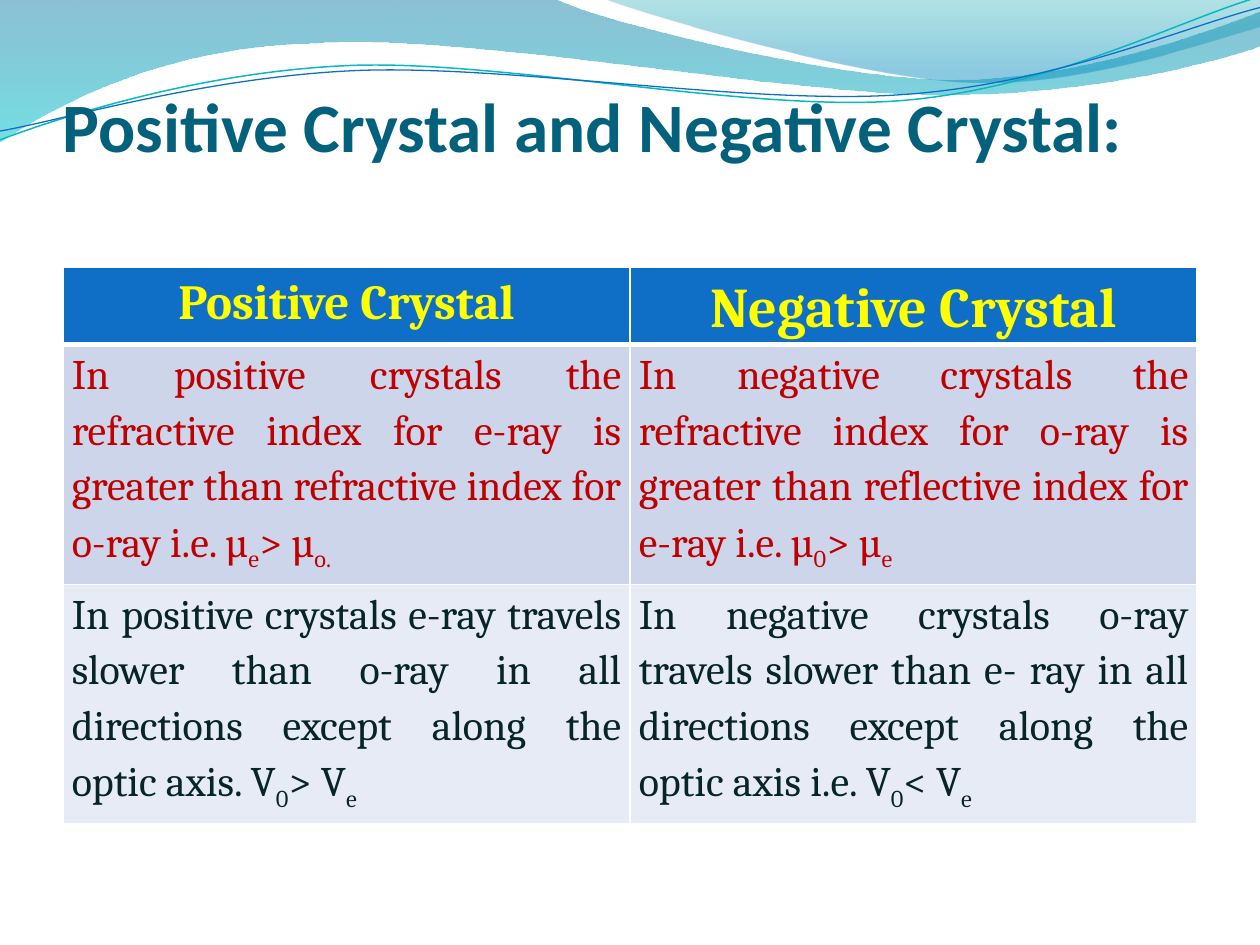
import math

from lxml import etree
from pptx import Presentation
from pptx.dml.color import RGBColor
from pptx.enum.text import MSO_ANCHOR, PP_ALIGN
from pptx.oxml.ns import qn
from pptx.util import Inches, Pt

CENTER, JUSTIFY, BOTTOM = PP_ALIGN.CENTER, PP_ALIGN.JUSTIFY, MSO_ANCHOR.BOTTOM
BLUE = RGBColor(0x0F, 0x6F, 0xC6)
TEAL = RGBColor(0x0A, 0xB8, 0xBF)
TITLE_COLOR = RGBColor(0x04, 0x61, 0x7B)
YELLOW = RGBColor(0xFF, 0xFF, 0x00)
RED = RGBColor(0xC0, 0x00, 0x00)
DARK = RGBColor(0x07, 0x24, 0x28)
BAND_1 = RGBColor(0xCC, 0xD5, 0xEA)
BAND_2 = RGBColor(0xE7, 0xEB, 0xF5)

# Content: body cells alternate normal and subscript runs
TITLE = "Positive Crystal and Negative Crystal:"
HEADERS = [("Positive Crystal", 28), ("Negative Crystal", 32)]
BODY = [
    (RED, BAND_1, [
        ["In positive crystals the refractive index for e-ray is greater than "
         "refractive index for o-ray i.e. µ", "e", "> µ", "o."],
        ["In negative crystals the refractive index for o-ray is greater than "
         "reflective index for e-ray i.e. µ", "0", "> µ", "e"],
    ]),
    (DARK, BAND_2, [
        ["In positive crystals e-ray travels slower than o-ray in all "
         "directions except along the optic axis. V", "0", "> V", "e"],
        ["In negative crystals o-ray travels slower than e- ray in all "
         "directions except along the optic axis i.e. V", "0", "< V", "e"],
    ]),
]
MIN_ROW_HEIGHT = 0.41

# Waves: one point is a straight step, three points are a Bezier step
FILLED_WAVES = [
    ([[(0, 0)], [(4.4, -0.01)], [(4.76, 0.17), (6.64, 0.63), (7.58, 0.63)],
      [(8.53, 0.63), (9.58, 0.26), (10, 0.09)], [(10.01, 0.36)],
      [(9.83, 0.44), (8.7, 0.76), (7.46, 0.75)],
      [(6.22, 0.75), (3.82, 0.28), (2.57, 0.34)],
      [(1.29, 0.36), (0.46, 0.83), (-0.01, 1.13)]],
     [(0, RGBColor(0x00, 0x74, 0xA1), 45), (1, RGBColor(0x00, 0xC6, 0xCF), 55)]),
    ([[(4.79, -0.01)], [(5.09, 0.11), (6.82, 0.62), (7.69, 0.65)],
      [(8.56, 0.69), (9.61, 0.32), (10, 0.21)], [(10, 0)]],
     [(0, RGBColor(0x00, 0xA1, 0xA9), 30), (0.8, RGBColor(0x00, 0x8B, 0xBF), 45)]),
]
LINE_WAVES = [
    ([[(0, 1.11)], [(0.48, 0.93), (1.58, 0.57), (2.77, 0.52)],
      [(3.95, 0.47), (5.93, 0.89), (7.13, 0.8)],
      [(8.33, 0.71), (9.38, 0.15), (9.98, -0.02)]], TEAL, 0.85),
    ([[(0, 1.04)], [(0.47, 0.96), (1.64, 0.61), (2.83, 0.56)],
      [(4.03, 0.51), (5.97, 0.84), (7.17, 0.75)],
      [(8.36, 0.67), (9.41, 0.21), (10, 0.06)]], BLUE, 0.75),
]
LINE_TILT = -2.7
LINE_CENTER = (4.99, 0.57)


def level(point):
    """Turn a point of a tilted line back to its level position."""
    angle = math.radians(-LINE_TILT)
    x, y = point[0] - LINE_CENTER[0], point[1] - LINE_CENTER[1]
    return (LINE_CENTER[0] + x * math.cos(angle) - y * math.sin(angle),
            LINE_CENTER[1] + x * math.sin(angle) + y * math.cos(angle))


def add_wave(slide, steps, close):
    points = [(Inches(x), Inches(y)) for step in steps for x, y in step]
    builder = slide.shapes.build_freeform(*points[0])
    builder.add_line_segments(points[1:], close=close)
    wave = builder.convert_to_shape()
    wave.shadow.inherit = False
    # Join each three points of a Bezier step into one curve
    segments = iter(list(wave._element.iter(qn("a:lnTo"))))
    for step in steps[1:]:
        curve, *others = [next(segments) for _ in step]
        if others:
            bezier = etree.Element(qn("a:cubicBezTo"))
            curve.addprevious(bezier)
            for segment in (curve, *others):
                bezier.append(segment[0])
                segment.getparent().remove(segment)
    return wave


def add_run(paragraph, text, font_name, size, color, bold=False, subscript=False):
    run = paragraph.add_run()
    run.text = text
    run.font.name, run.font.size, run.font.bold = font_name, Pt(size), bold
    run.font.color.rgb = color
    if subscript:
        run.font._element.set("baseline", "-25000")


def set_borders(cell, bottom):
    properties = cell._tc.get_or_add_tcPr()
    for side, width in (("L", 1), ("R", 1), ("T", 1), ("B", bottom)):
        border = etree.SubElement(properties, qn(f"a:ln{side}"), w=str(Pt(width)))
        fill = etree.SubElement(border, qn("a:solidFill"))
        etree.SubElement(fill, qn("a:srgbClr"), val="FFFFFF")


def prepare_cell(cell, fill, alignment, bottom=1):
    set_borders(cell, bottom)
    cell.fill.solid()
    cell.fill.fore_color.rgb = fill
    cell.margin_left = cell.margin_right = Inches(0.07)
    cell.margin_top = cell.margin_bottom = 0
    paragraph = cell.text_frame.paragraphs[0]
    paragraph.alignment, paragraph.line_spacing = alignment, 1.15
    return paragraph


prs = Presentation()
prs.slide_width, prs.slide_height = Inches(10), Inches(7.5)
slide = prs.slides.add_slide(prs.slide_layouts[6])

# Wave decoration
for steps, stops in FILLED_WAVES:
    wave = add_wave(slide, steps, True)
    wave.line.fill.background()
    wave.fill.gradient()
    wave.fill.gradient_angle = 270
    for stop, (position, color, _) in zip(wave.fill.gradient_stops, stops):
        stop.position, stop.color.rgb = position, color
    for color_xml, (_, _, opacity) in zip(wave._element.spPr.iter(qn("a:srgbClr")), stops):
        etree.SubElement(color_xml, qn("a:alpha"), val=str(opacity * 1000))
for steps, color, width in LINE_WAVES:
    wave = add_wave(slide, [[level(point) for point in step] for step in steps], False)
    wave.rotation = LINE_TILT
    wave.fill.background()
    wave.line.color.rgb, wave.line.width = color, Pt(width)

# Title, with one line's room left below it
title = slide.shapes.add_textbox(Inches(0.5), Inches(0.77), Inches(9), Inches(1.25)).text_frame
title.word_wrap, title.vertical_anchor = True, BOTTOM
title.margin_left = title.margin_right = title.margin_top = 0
title.margin_bottom = Inches(0.74)
add_run(title.paragraphs[0], TITLE, "Calibri", 39.6, TITLE_COLOR, bold=True)

# Comparison table: rows grow with their text
frame = slide.shapes.add_table(1 + len(BODY), len(HEADERS), Inches(0.5), Inches(2.12),
                               Inches(9), Inches(4.29))
table = frame.table
for row in table.rows:
    row.height = Inches(MIN_ROW_HEIGHT)
frame.height = Inches(4.29)
for column, (text, size) in enumerate(HEADERS):
    paragraph = prepare_cell(table.cell(0, column), BLUE, CENTER, bottom=3)
    add_run(paragraph, text, "Cambria", size, YELLOW, bold=True)
for row, (color, band, cells) in enumerate(BODY, 1):
    for column, pieces in enumerate(cells):
        paragraph = prepare_cell(table.cell(row, column), band, JUSTIFY)
        for i, text in enumerate(pieces):
            add_run(paragraph, text, "Cambria", 24, color, subscript=i % 2 == 1)

prs.save("out.pptx")
